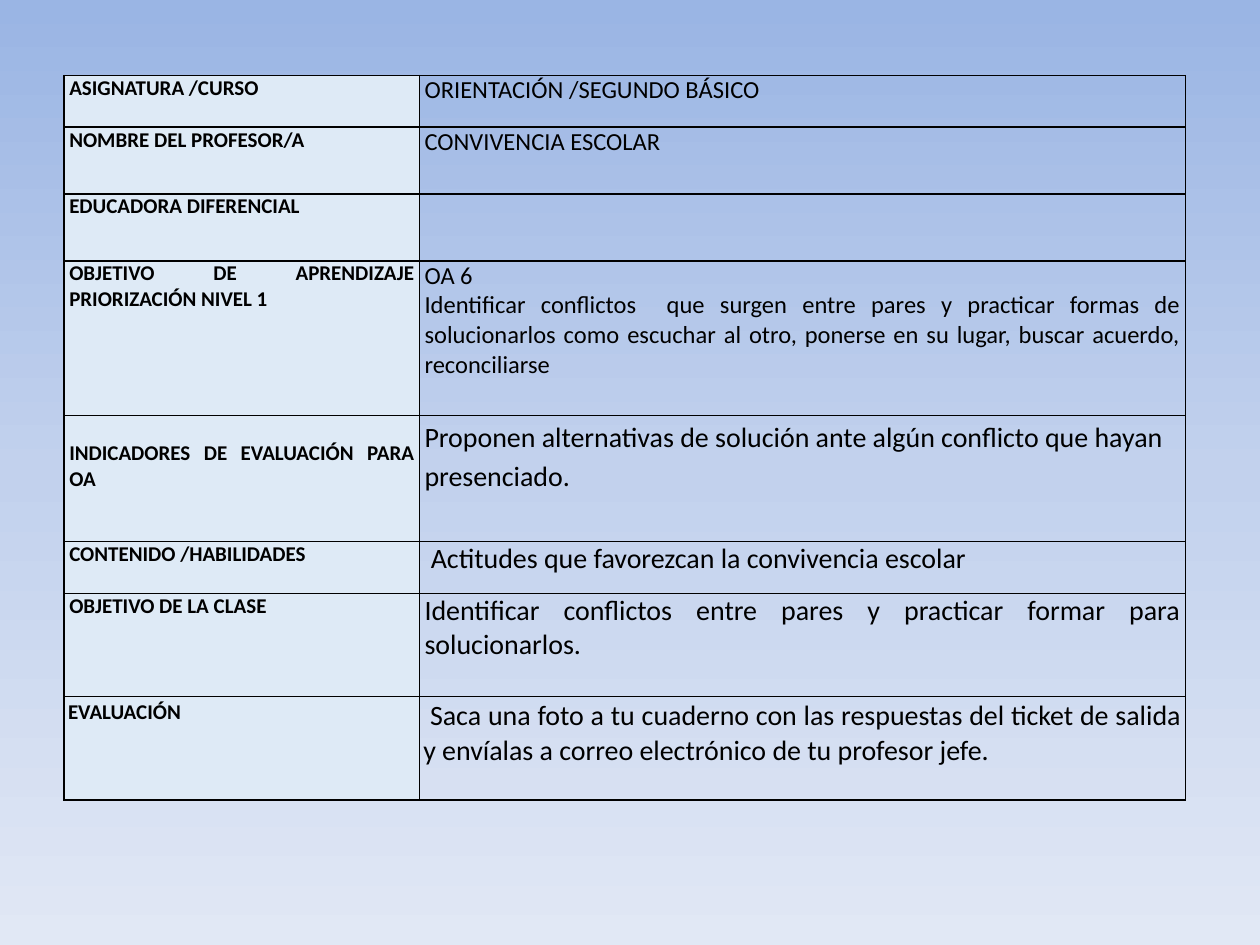
"""Build a one-slide lesson plan table on a blue gradient background."""
import copy
from dataclasses import dataclass

import lxml.etree
import pptx
import pptx.dml.color
import pptx.enum.text
import pptx.oxml.ns
import pptx.util

Inches = pptx.util.Inches
Pt = pptx.util.Pt
qn = pptx.oxml.ns.qn

FONT = "Calibri"
BLACK = "000000"
LABEL_FILL = "DEEAF6"
BACKGROUND = ["9AB5E4", "C2D1ED", "E1E8F5"]
COLUMNS = [2.82, 6.08]


@dataclass
class PlanRow:
    label: str
    content: str
    height: float
    size: int = 14
    justified: bool = True
    spacing: float = 1.0
    inset_x: float = 0.04
    inset_y: float = 0.0
    label_top: float = 0.0


ROWS = [
    PlanRow("ASIGNATURA /CURSO", "ORIENTACIÓN /SEGUNDO BÁSICO", 0.41),
    PlanRow("NOMBRE DEL PROFESOR/A", "CONVIVENCIA ESCOLAR", 0.53),
    PlanRow("EDUCADORA DIFERENCIAL", "", 0.53),
    PlanRow(
        "OBJETIVO DE APRENDIZAJE PRIORIZACIÓN NIVEL 1",
        "OA 6\nIdentificar conflictos  que surgen entre pares y practicar formas de "
        "solucionarlos como escuchar al otro, ponerse en su lugar, buscar acuerdo, "
        "reconciliarse",
        1.23,
    ),
    PlanRow(
        "INDICADORES DE EVALUACIÓN PARA OA",
        "Proponen alternativas de solución ante algún conflicto que hayan presenciado.",
        1.0, size=16, justified=False, spacing=1.15, label_top=0.2,
    ),
    PlanRow("CONTENIDO /HABILIDADES",
            " Actitudes que favorezcan la convivencia escolar", 0.41, size=16),
    PlanRow(
        "OBJETIVO DE LA CLASE",
        "Identificar conflictos entre pares y practicar formar para solucionarlos.",
        0.82, size=16,
    ),
    PlanRow(
        "EVALUACIÓN",
        " Saca una foto a tu cuaderno con las respuestas del ticket de salida "
        "y envíalas a correo electrónico de tu profesor jefe.",
        0.82, size=16, inset_x=0.03, inset_y=0.02,
    ),
]


def rgb(value: str) -> pptx.dml.color.RGBColor:
    return pptx.dml.color.RGBColor.from_string(value)


def paint_background(s: pptx.slide.Slide, colors: list[str]) -> None:
    fill = s.background.fill
    fill.gradient()
    fill.gradient_angle = 270
    stops = s.element.find(".//" + qn("a:gsLst"))
    stops.insert(1, copy.deepcopy(stops[0]))
    for i, (stop, color) in enumerate(zip(fill.gradient_stops, colors)):
        stop.position = i / (len(colors) - 1)
        stop.color.rgb = rgb(color)


def add_borders(cell: pptx.table._Cell, color: str, width: float) -> None:
    tcPr = cell._tc.get_or_add_tcPr()
    for side in ("a:lnL", "a:lnR", "a:lnT", "a:lnB"):
        ln = lxml.etree.SubElement(tcPr, qn(side), w=str(Pt(width)))
        solid = lxml.etree.SubElement(ln, qn("a:solidFill"))
        lxml.etree.SubElement(solid, qn("a:srgbClr"), val=color)


def write_cell(cell: pptx.table._Cell, text: str, size: int, bold: bool,
               justified: bool, spacing: float) -> None:
    align = pptx.enum.text.PP_ALIGN
    tf = cell.text_frame
    tf.text = text
    for p in tf.paragraphs:
        p.alignment = align.JUSTIFY if justified else align.LEFT
        p.line_spacing = spacing
        for r in p.runs:
            r.font.name = FONT
            r.font.size = Pt(size)
            r.font.bold = bold
            r.font.color.rgb = rgb(BLACK)


def draw_row(table: pptx.table.Table, index: int, row: PlanRow) -> None:
    table.rows[index].height = Inches(row.height)
    label, content = table.cell(index, 0), table.cell(index, 1)
    for cell in (label, content):
        cell.margin_left = cell.margin_right = Inches(row.inset_x)
        cell.margin_top = cell.margin_bottom = Inches(row.inset_y)
        add_borders(cell, BLACK, 1)
    label.margin_top = Inches(row.inset_y + row.label_top)
    label.fill.solid()
    label.fill.fore_color.rgb = rgb(LABEL_FILL)
    content.fill.background()
    write_cell(label, row.label, 12, True, True, 1.0)
    write_cell(content, row.content, row.size, False, row.justified, row.spacing)


def main() -> None:
    prs = pptx.Presentation()
    prs.slide_width, prs.slide_height = Inches(10), Inches(7.5)
    s = prs.slides.add_slide(prs.slide_layouts[6])
    paint_background(s, BACKGROUND)
    table = s.shapes.add_table(
        len(ROWS), len(COLUMNS), Inches(0.51), Inches(0.6),
        Inches(sum(COLUMNS)), Inches(sum(row.height for row in ROWS)),
    ).table
    table.first_row = table.horz_banding = False
    for column, width in zip(table.columns, COLUMNS):
        column.width = Inches(width)
    for i, row in enumerate(ROWS):
        draw_row(table, i, row)
    prs.save("out.pptx")


if __name__ == "__main__":
    main()
